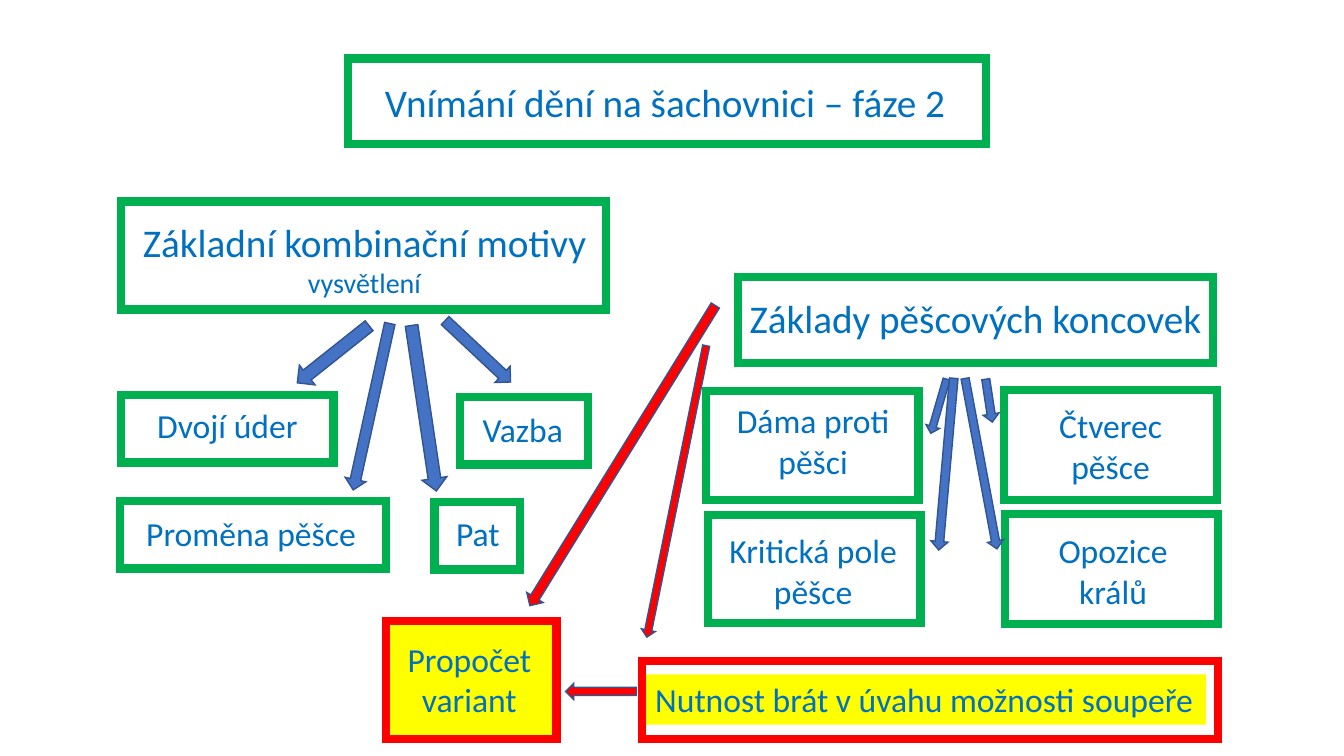
from lxml import etree
from pptx import Presentation
from pptx.dml.color import RGBColor
from pptx.enum.shapes import MSO_SHAPE
from pptx.enum.text import MSO_AUTO_SIZE, PP_ALIGN
from pptx.oxml.ns import qn
from pptx.util import Inches, Pt

RECT, DOWN = MSO_SHAPE.RECTANGLE, MSO_SHAPE.DOWN_ARROW
CENTER, GROW = PP_ALIGN.CENTER, MSO_AUTO_SIZE.SHAPE_TO_FIT_TEXT
GREEN, RED, BLUE, YELLOW = "00B050", "FF0000", "4472C4", "FFFF00"
INK, EDGE = "0070C0", "325491"

# text lines with sizes, label place, frame place
TOPICS = [
    ([("Vnímání dění na šachovnici – fáze 2", 28)], (3.57, 0.73, 6.05, 0.57), (3.45, 0.58, 6.33, 0.85)),
    ([("Základní kombinační motivy", 28), ("vysvětlení", 20)], (1.3, 2.12, 4.63, 0.91), (1.2, 2, 4.81, 1.07)),
    ([("Základy pěšcových koncovek", 28)], (7.32, 2.87, 4.71, 0.57), (7.32, 2.75, 4.71, 0.85)),
    ([("Dvojí úder", 24)], (1.31, 3.97, 1.89, 0.5), (1.2, 3.92, 2.11, 0.67)),
    ([("Vazba", 24)], (4.66, 4.01, 1.05, 0.5), (4.56, 3.94, 1.27, 0.67)),
    ([("Proměna pěšce", 24)], (1.3, 5.04, 2.38, 0.5), (1.19, 4.97, 2.64, 0.67)),
    ([("Pat", 24)], (4.4, 5.04, 0.68, 0.5), (4.31, 4.98, 0.85, 0.67)),
    ([("Dáma proti pěšci", 24)], (7.1, 3.92, 1.93, 0.91), (7, 3.88, 2.11, 1.08)),
    ([("Čtverec pěšce", 24)], (10.09, 3.97, 1.85, 0.91), (9.96, 3.87, 2.11, 1.09)),
    ([("Kritická pole pěšce", 24)], (7.1, 5.21, 1.93, 0.91), (7.02, 5.11, 2.11, 1.07)),
    ([("Opozice králů", 24)], (10.11, 5.21, 1.86, 0.91), (9.97, 5.1, 2.11, 1.09)),
]
RIVAL = ([("Nutnost brát v úvahu možnosti soupeře", 24)], (6.37, 6.69, 5.59, 0.5), (6.37, 6.56, 5.71, 0.77))
COUNT = ([("Propočet variant", 24)], (3.92, 6.29, 1.47, 0.91), (3.83, 6.16, 1.69, 1.17))

# place, turn in degrees
ARROWS = {
    RED: [
        ((5.88, 6.51, 0.16, 0.7), 90),
        ((6.64, 3.4, 0.14, 2.95), 11.5),
        ((6.08, 2.77, 0.19, 3.5), 31.7),
    ],
    BLUE: [
        ((9.24, 3.75, 0.14, 0.56), 16.2),
        ((9.3, 3.75, 0.17, 1.71), 5),
        ((9.65, 3.74, 0.16, 1.72), -10.6),
        ((9.73, 3.76, 0.16, 0.43), -8.7),
        ((3.58, 3.19, 0.21, 1.69), 12.4),
        ((4.08, 3.22, 0.25, 1.66), -8.5),
        ((3.18, 3.06, 0.25, 0.91), 51.5),
        ((4.63, 3.04, 0.22, 0.89), -46.8),
    ],
}


def paint(fill, color):
    """Fill with a hex colour, or leave clear."""
    if color:
        fill.solid()
        fill.fore_color.rgb = RGBColor.from_string(color)
    else:
        fill.background()


def shape(kind, place, fill, edge, width):
    """Add a preset shape with a sharp outline."""
    item = slide.shapes.add_shape(kind, *map(Inches, place))
    item.shadow.inherit = False
    paint(item.fill, fill)
    paint(item.line.fill, edge)
    item.line.width = Pt(width)
    line = item.line._get_or_add_ln()
    etree.SubElement(line, qn("a:miter"), lim="800000")
    return item


def label(lines, place, fill=None):
    """Add centred text, one paragraph a line."""
    box = slide.shapes.add_textbox(*map(Inches, place))
    paint(box.fill, fill)
    frame = box.text_frame
    frame.word_wrap = True
    frame.auto_size = GROW
    frame.text = "\n".join(text for text, size in lines)
    for par, (text, size) in zip(frame.paragraphs, lines):
        par.alignment = CENTER
        par.font.name = "Calibri"
        par.font.size = Pt(size)
        paint(par.font.fill, INK)


deck = Presentation()
deck.slide_width, deck.slide_height = Inches(13.33), Inches(7.5)
slide = deck.slides.add_slide(deck.slide_layouts[6])

for lines, place, border in TOPICS:
    shape(RECT, border, None, GREEN, 6)
    label(lines, place)

lines, place, border = RIVAL
label(lines, place, YELLOW)
shape(RECT, border, None, RED, 6)

lines, place, border = COUNT
shape(RECT, border, YELLOW, RED, 6)
label(lines, place)

for color, group in ARROWS.items():
    for place, turn in group:
        shape(DOWN, place, color, EDGE, 1).rotation = turn

deck.save("out.pptx")
